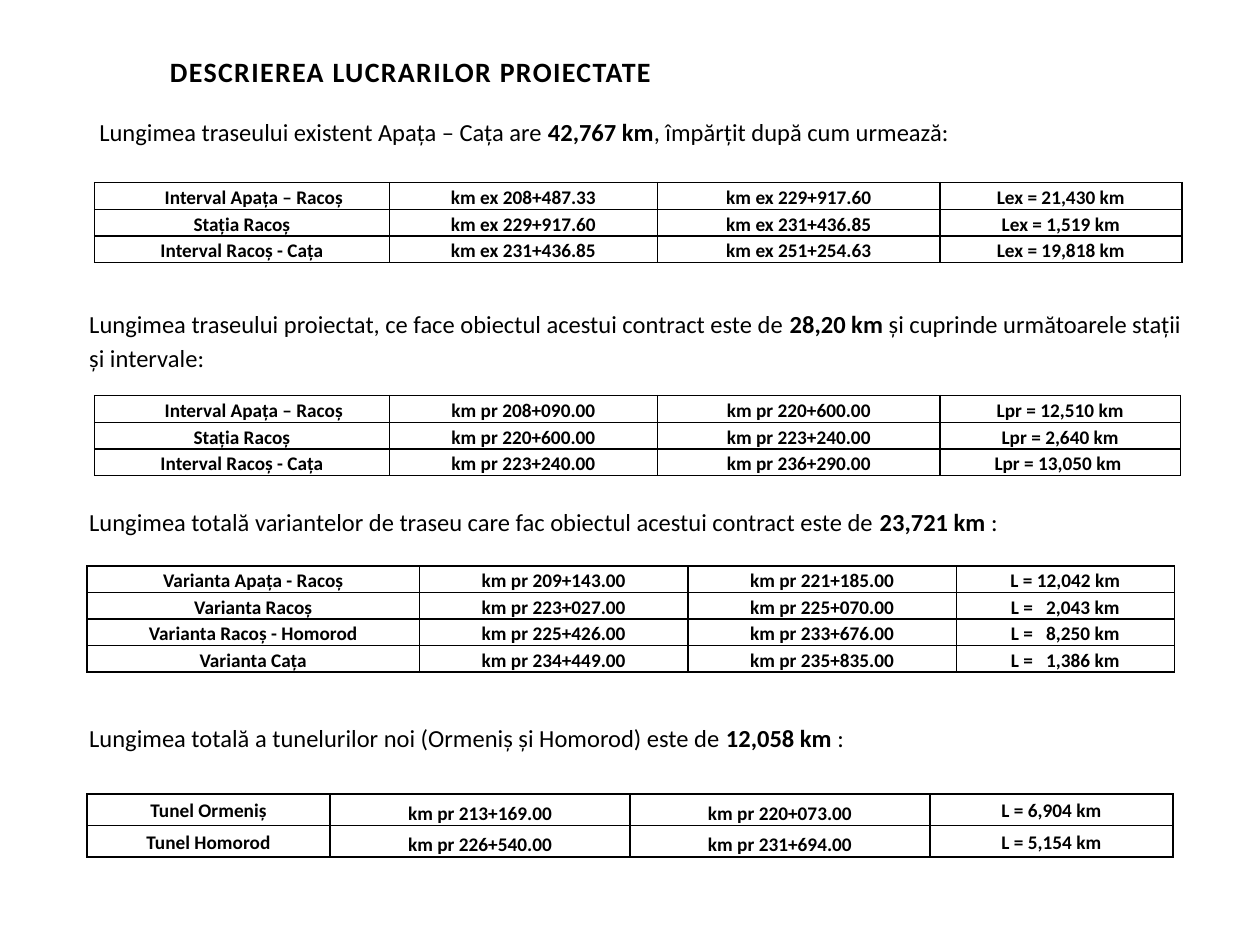
import pptx
import pptx.dml.color
import pptx.enum.text
import pptx.oxml
import pptx.oxml.ns
import pptx.util
from pptx.util import Inches

BLACK = pptx.dml.color.RGBColor(0, 0, 0)
ALIGN = pptx.enum.text.PP_ALIGN
MIDDLE = pptx.enum.text.MSO_ANCHOR.MIDDLE
BOTTOM = pptx.enum.text.MSO_ANCHOR.BOTTOM
BORDER = (
    '<a:{side} %s w="12700"><a:solidFill><a:srgbClr val="{color}"/></a:solidFill></a:{side}>'
    % pptx.oxml.ns.nsdecls("a")
)
HANGING = {"marL": Inches(0.49), "indent": Inches(-0.3)}


def apply_format(target, values):
    """Set every attribute in values on target."""
    for name, value in values.items():
        setattr(target, name, value)


def spacing(before=0, after=0, line=1.15, alignment=ALIGN.JUSTIFY):
    """Return paragraph format values; gaps are in points."""
    return {
        "alignment": alignment,
        "line_spacing": line,
        "space_before": pptx.util.Pt(before),
        "space_after": pptx.util.Pt(after),
    }


def short_length(value):
    """Return a length whose wider gap lines it up with two-digit lengths."""
    return [("L =", True), (" ", True, 5), (value, True)]


class RouteSlide:
    """Holds the text style and the current slide."""

    def __init__(self, presentation):
        """Add a blank slide."""
        self.slide = presentation.slides.add_slide(presentation.slide_layouts[6])
        self.font = {"name": "Calibri"}

    def fill_paragraph(self, paragraph, runs, size, layout, hanging=False):
        """Write (text, bold, letter spacing) runs into a paragraph."""
        apply_format(paragraph, layout)
        if hanging:
            properties = paragraph._p.get_or_add_pPr()
            for name, value in HANGING.items():
                properties.set(name, str(int(value)))
        for text, bold, *tracking in runs:
            run = paragraph.add_run()
            run.text = text
            apply_format(run.font, {**self.font, "size": pptx.util.Pt(size), "bold": bold})
            run.font.color.rgb = BLACK
            for points in tracking:
                run.font._element.set("spc", str(round(points * 100)))

    def text(self, place, runs, layout, size=14, wrap=True, hanging=False):
        """Add a text box with one paragraph."""
        frame = self.slide.shapes.add_textbox(*map(Inches, place)).text_frame
        apply_format(frame, {
            "word_wrap": wrap,
            "auto_size": pptx.enum.text.MSO_AUTO_SIZE.SHAPE_TO_FIT_TEXT,
        })
        self.fill_paragraph(frame.paragraphs[0], runs, size, layout, hanging)

    def border(self, cell):
        """Draw all four edges of a cell."""
        properties = cell._tc.get_or_add_tcPr()
        for side in ("lnL", "lnR", "lnT", "lnB"):
            properties.append(pptx.oxml.parse_xml(BORDER.format(side=side, color=BLACK)))

    def table(self, left, top, widths, height, rows, gaps, hanging=False, km_anchor=MIDDLE):
        """Add a bordered table; gaps holds the paragraph gap of each row."""
        grid = self.slide.shapes.add_table(
            len(rows), len(widths), Inches(left), Inches(top),
            Inches(sum(widths)), Inches(height * len(rows))).table
        apply_format(grid, {"first_row": False, "horz_banding": False})
        for column, width in zip(grid.columns, widths):
            column.width = Inches(width)
        for r, (row, gap) in enumerate(zip(rows, gaps)):
            grid.rows[r].height = Inches(height)
            for c, content in enumerate(row):
                cell = grid.cell(r, c)
                apply_format(cell, {
                    "margin_left": Inches(0.07), "margin_right": Inches(0.07),
                    "margin_top": 0, "margin_bottom": 0,
                    "vertical_anchor": km_anchor if c in (1, 2) else MIDDLE,
                })
                self.border(cell)
                cell.fill.background()
                indented = hanging and r == c == 0
                gap_here = 0 if indented else gap
                runs = [(content, True)] if isinstance(content, str) else content
                self.fill_paragraph(
                    cell.text_frame.paragraphs[0], runs, 11,
                    spacing(gap_here, gap_here, alignment=ALIGN.CENTER), indented)


presentation = pptx.Presentation()
apply_format(presentation, {"slide_width": Inches(10), "slide_height": Inches(7.5)})
route = RouteSlide(presentation)

route.text((1.25, 0.34, 4.12, 0.41), [("DESCRIEREA LUCRARILOR PROIECTATE", True, 0.8)],
           spacing(10), size=16, wrap=False)

route.text((0.5, 0.88, 9, 0.34), [
    ("Lungimea traseului existent Apața – Cața are ", False),
    ("42,767 km", True),
    (", împărțit după cum urmează:", False),
], spacing(after=6, line=1.0), hanging=True)
route.table(0.75, 1.45, (2.34, 2.13, 2.24, 1.92), 0.21, [
    ("Interval Apața – Racoș", "km ex 208+487.33", "km ex 229+917.60", "Lex = 21,430 km"),
    ("Stația Racoș", "km ex 229+917.60", "km ex 231+436.85", "Lex = 1,519 km"),
    ("Interval Racoș - Cața", "km ex 231+436.85", "km ex 251+254.63", "Lex = 19,818 km"),
], (10, 10, 10), hanging=True)

route.text((0.61, 2.37, 8.91, 0.63), [
    ("Lungimea traseului proiectat, ce face obiectul acestui contract este de ", False),
    ("28,20 km", True),
    (" și cuprinde următoarele stații și intervale: ", False),
], spacing(6, 6, alignment=ALIGN.LEFT))
route.table(0.75, 3.14, (2.34, 2.13, 2.24, 1.91), 0.21, [
    ("Interval Apața – Racoș", "km pr 208+090.00", "km pr 220+600.00", "Lpr = 12,510 km"),
    ("Stația Racoș", "km pr 220+600.00", "km pr 223+240.00", "Lpr = 2,640 km"),
    ("Interval Racoș - Cața", "km pr 223+240.00", "km pr 236+290.00", "Lpr = 13,050 km "),
], (10, 6, 6), hanging=True)

route.text((0.61, 3.94, 8.77, 0.37), [
    ("Lungimea totală variantelor de traseu care fac obiectul acestui contract este de ", False),
    ("23,721 km", True),
    (" : ", False),
], spacing(6, 6))
route.table(0.69, 4.49, (2.64, 2.13, 2.13, 1.73), 0.21, [
    ("Varianta Apața - Racoș", "km pr 209+143.00", "km pr 221+185.00", "L = 12,042 km"),
    ("Varianta Racoș", "km pr 223+027.00", "km pr 225+070.00", short_length("2,043 km")),
    ("Varianta Racoș - Homorod", "km pr 225+426.00", "km pr 233+676.00", short_length("8,250 km")),
    ("Varianta Cața", "km pr 234+449.00", "km pr 235+835.00", short_length("1,386 km")),
], (6, 6, 6, 6), km_anchor=BOTTOM)

route.text((0.61, 5.69, 8.77, 0.34), [
    ("Lungimea totală a tunelurilor noi (Ormeniș și Homorod) este de ", False),
    ("12,058 km", True),
    (" : ", False),
], spacing(6, 6, line=1.0))
route.table(0.69, 6.3, (1.93, 2.38, 2.38, 1.93), 0.25, [
    ("Tunel Ormeniș", "km pr 213+169.00", "km pr 220+073.00", "L = 6,904 km"),
    ("Tunel Homorod", "km pr 226+540.00", "km pr 231+694.00", "L = 5,154 km"),
], (6, 6), km_anchor=BOTTOM)

presentation.save("out.pptx")
